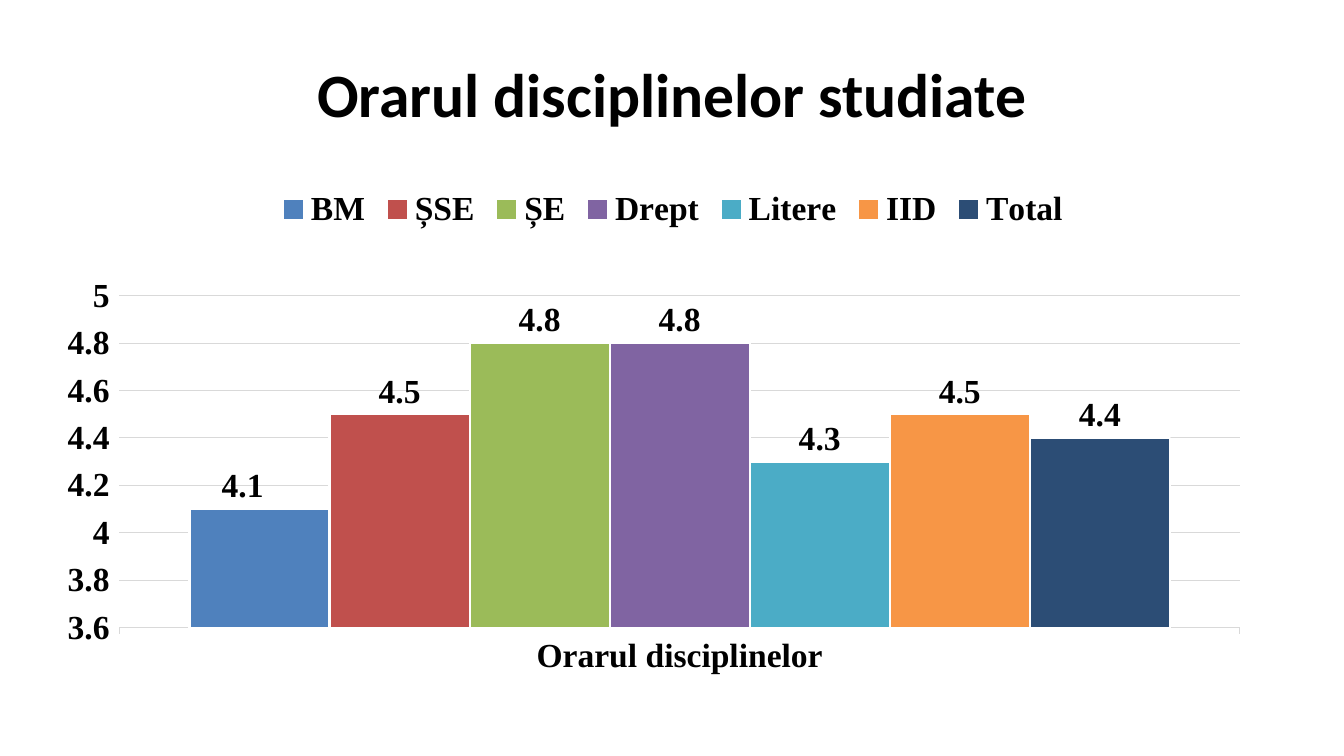
"""Build the slide with the column chart of scores for the course timetable."""
import lxml.etree
import pptx
import pptx.chart.data
import pptx.dml.color
import pptx.enum.chart
import pptx.enum.text
import pptx.oxml
import pptx.oxml.ns
import pptx.util
from pptx.util import Inches

COLORS = {
    "text": "000000",
    "grid": "D9D9D9",
    "bar_edge": "FFFFFF",
    "BM": "4F81BD",
    "ȘSE": "C0504D",
    "ȘE": "9BBB59",
    "Drept": "8064A2",
    "Litere": "4BACC6",
    "IID": "F79646",
    "Total": "2C4D75",
}
SCORES = {"BM": 4.1, "ȘSE": 4.5, "ȘE": 4.8, "Drept": 4.8,
          "Litere": 4.3, "IID": 4.5, "Total": 4.4}


def rgb(name):
    """Return the named colour."""
    return pptx.dml.color.RGBColor.from_string(COLORS[name])


def style_font(font, family, size):
    """Make a font bold and black in the given family and size."""
    font.name = family
    font.size = pptx.util.Pt(size)
    font.bold = True
    font.color.rgb = rgb("text")


def style_line(line, color, width):
    """Give a line its colour and its width in points."""
    line.color.rgb = rgb(color)
    line.width = pptx.util.Pt(width)


def manual_layout(**settings):
    """Return a chart layout element with the given settings."""
    layout = lxml.etree.Element(pptx.oxml.ns.qn("c:layout"))
    manual = lxml.etree.SubElement(layout, pptx.oxml.ns.qn("c:manualLayout"))
    for tag, value in settings.items():
        lxml.etree.SubElement(manual, pptx.oxml.ns.qn(f"c:{tag}")).set("val", str(value))
    return layout


def add_title(slide, wording):
    """Add the centred slide title."""
    title = slide.shapes.add_textbox(Inches(0.67), Inches(0.3), Inches(12), Inches(1.25))
    frame = title.text_frame
    frame.word_wrap = True
    frame.vertical_anchor = pptx.enum.text.MSO_ANCHOR.MIDDLE
    frame.text = wording
    heading = frame.paragraphs[0]
    heading.alignment = pptx.enum.text.PP_ALIGN.CENTER
    style_font(heading.runs[0].font, "Calibri", 44)


def style_axes(chart):
    """Set the scale, the lines and the gridlines of both axes."""
    faculties, scores = chart.category_axis, chart.value_axis
    scores.minimum_scale, scores.maximum_scale, scores.major_unit = 3.6, 5, 0.2
    scores.has_major_gridlines = True
    style_line(scores.major_gridlines.format.line, "grid", 0.75)
    scores.format.line.fill.background()
    style_line(faculties.format.line, "grid", 0.75)
    for axis in (faculties, scores):
        axis.major_tick_mark = pptx.enum.chart.XL_TICK_MARK.OUTSIDE
        style_font(axis.tick_labels.font, "Times New Roman", 24)


def style_bars(plot):
    """Colour the bars and label them with their values."""
    plot.gap_width = 100
    plot.overlap = 0
    plot.vary_by_categories = False
    for faculty in plot.series:
        faculty.format.fill.solid()
        faculty.format.fill.fore_color.rgb = rgb(faculty.name)
        style_line(faculty.format.line, "bar_edge", 1.5)
        labels = faculty.data_labels
        labels.show_value = True
        labels.position = pptx.enum.chart.XL_LABEL_POSITION.OUTSIDE_END
        style_font(labels.font, "Times New Roman", 24)


def shift_first_label(faculty):
    """Move the value label of the first bar a little to the left."""
    label = faculty.points[0].data_label
    style_font(label.font, "Times New Roman", 24)
    label.position = pptx.enum.chart.XL_LABEL_POSITION.OUTSIDE_END
    index = faculty._element.xpath("c:dLbls/c:dLbl/c:idx")[0]
    index.addnext(manual_layout(x=-0.014, y=0))


def add_score_chart(slide):
    """Add the column chart with one series for each faculty."""
    score_data = pptx.chart.data.CategoryChartData()
    score_data.categories = ["Orarul disciplinelor"]
    for faculty, score in SCORES.items():
        score_data.add_series(faculty, [score])
    chart = slide.shapes.add_chart(
        pptx.enum.chart.XL_CHART_TYPE.COLUMN_CLUSTERED,
        Inches(0.67), Inches(1.75), Inches(12), Inches(4.95), score_data).chart
    style_font(chart.font, "Times New Roman", 24)
    chart.has_title = False
    chart.has_legend = True
    chart.legend.position = pptx.enum.chart.XL_LEGEND_POSITION.TOP
    chart.legend.include_in_layout = False
    style_font(chart.legend.font, "Times New Roman", 24)
    style_axes(chart)
    style_bars(chart.plots[0])
    shift_first_label(chart.plots[0].series[0])
    plot_area = chart._chartSpace.xpath("c:chart/c:plotArea")[0]
    for layout in plot_area.xpath("c:layout"):
        plot_area.remove(layout)
    plot_area.insert(0, manual_layout(
        layoutTarget="inner", xMode="edge", yMode="edge",
        x=0.042, y=0.24, w=0.927, h=0.667))


def main():
    """Build and save the presentation."""
    deck = pptx.Presentation()
    deck.slide_width, deck.slide_height = Inches(13.33), Inches(7.5)
    slide = deck.slides.add_slide(deck.slide_layouts[6])
    add_title(slide, "Orarul disciplinelor studiate")
    add_score_chart(slide)
    deck.save("out.pptx")


if __name__ == "__main__":
    main()
